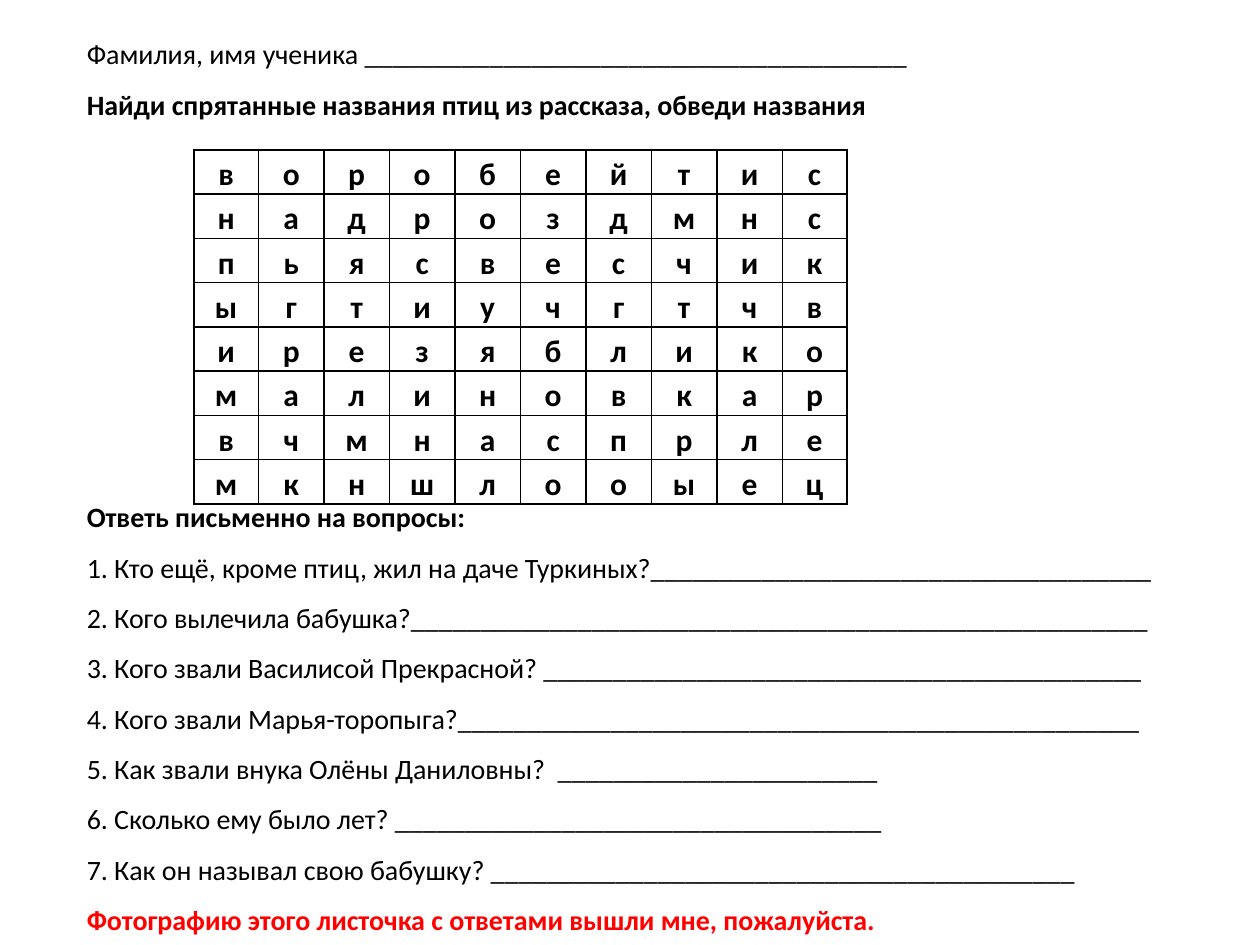
from dataclasses import dataclass

from lxml.etree import SubElement
from pptx import Presentation
from pptx.dml.color import RGBColor as RGB
from pptx.enum.text import MSO_ANCHOR as Anchor, MSO_AUTO_SIZE as AutoSize, PP_ALIGN as Align
from pptx.oxml.ns import qn
from pptx.util import Cm, Pt


@dataclass(frozen=True)
class Theme:
    font: str = "Calibri"
    text: RGB = RGB(0, 0, 0)
    accent: RGB = RGB(255, 0, 0)
    border: str = "000000"
    border_width: int = Pt(1)
    body_size: int = Pt(16)
    letter_size: int = Pt(18)


THEME = Theme()


@dataclass(frozen=True)
class Line:
    text: str
    blanks: int = 0
    bold: bool = False
    color: RGB = THEME.text
    space_before: int = Pt(0)


LINES = [
    Line("Фамилия, имя ученика ", 39),
    Line("Найди спрятанные названия птиц из рассказа, обведи названия", bold=True),
    Line("Ответь письменно на вопросы:", bold=True, space_before=Pt(207)),
    Line("1. Кто ещё, кроме птиц, жил на даче Туркиных?", 36),
    Line("2. Кого вылечила бабушка?", 53),
    Line("3. Кого звали Василисой Прекрасной? ", 43),
    Line("4. Кого звали Марья-торопыга?", 49),
    Line("5. Как звали внука Олёны Даниловны?  ", 23),
    Line("6. Сколько ему было лет? ", 35),
    Line("7. Как он называл свою бабушку? ", 42),
    Line("Фотографию этого листочка с ответами вышли мне, пожалуйста.",
         bold=True, color=THEME.accent),
]

LETTER_ROWS = [
    "воробейтис",
    "надроздмнс",
    "пьясвесчик",
    "ыгтиучгтчв",
    "ирезяблико",
    "малиновкар",
    "вчмнаспрле",
    "мкншлооыец",
]


def apply(target, **values) -> None:
    for name, value in values.items():
        setattr(target, name, value)


def write(p, text: str, size: int, bold: bool, color: RGB) -> None:
    r = p.add_run()
    r.text = text
    apply(r.font, name=THEME.font, size=size, bold=bold)
    r.font.color.rgb = color


def add_borders(cell) -> None:
    """Draw all four edges; the lines must precede the fill in the cell properties."""
    props = cell._tc.get_or_add_tcPr()
    for i, side in enumerate(("lnL", "lnR", "lnT", "lnB")):
        ln = SubElement(props, qn(f"a:{side}"), w=str(THEME.border_width))
        fill = SubElement(ln, qn("a:solidFill"))
        SubElement(fill, qn("a:srgbClr"), val=THEME.border)
        props.insert(i, ln)


def add_letter_grid(s, rows: list[str]) -> None:
    n_cols = len(rows[0])
    inner, outer, height = Cm(1.32), Cm(1.3), Cm(0.89)
    widths = [outer] + [inner] * (n_cols - 2) + [outer]
    table = s.shapes.add_table(len(rows), n_cols, Cm(3.91), Cm(3.02),
                               sum(widths), height * len(rows)).table
    apply(table, first_row=False, horz_banding=False)
    for column, width in zip(table.columns, widths):
        column.width = width
    for row, letters in zip(table.rows, rows):
        row.height = height
        for cell, letter in zip(row.cells, letters):
            apply(cell, margin_left=Cm(0.2), margin_right=Cm(0.2),
                  margin_top=0, margin_bottom=0)
            cell.fill.background()
            add_borders(cell)
            p = cell.text_frame.paragraphs[0]
            apply(p, alignment=Align.CENTER, line_spacing=1.15, space_after=Pt(7.5))
            write(p, letter, THEME.letter_size, True, THEME.text)


def add_worksheet_text(s, lines: list[Line]) -> None:
    tf = s.shapes.add_textbox(Cm(1.5), 0, Cm(22.6), Cm(19.28)).text_frame
    apply(tf, word_wrap=True, auto_size=AutoSize.SHAPE_TO_FIT_TEXT,
          vertical_anchor=Anchor.MIDDLE)
    for i, line in enumerate(lines):
        p = tf.add_paragraph() if i else tf.paragraphs[0]
        apply(p, line_spacing=1.5, space_before=line.space_before)
        write(p, line.text + "_" * line.blanks, THEME.body_size, line.bold, line.color)


def main() -> None:
    prs = Presentation()
    apply(prs, slide_width=Cm(25.4), slide_height=Cm(19.05))
    s = prs.slides.add_slide(prs.slide_layouts[6])
    add_letter_grid(s, LETTER_ROWS)
    add_worksheet_text(s, LINES)
    prs.save("out.pptx")


if __name__ == "__main__":
    main()
